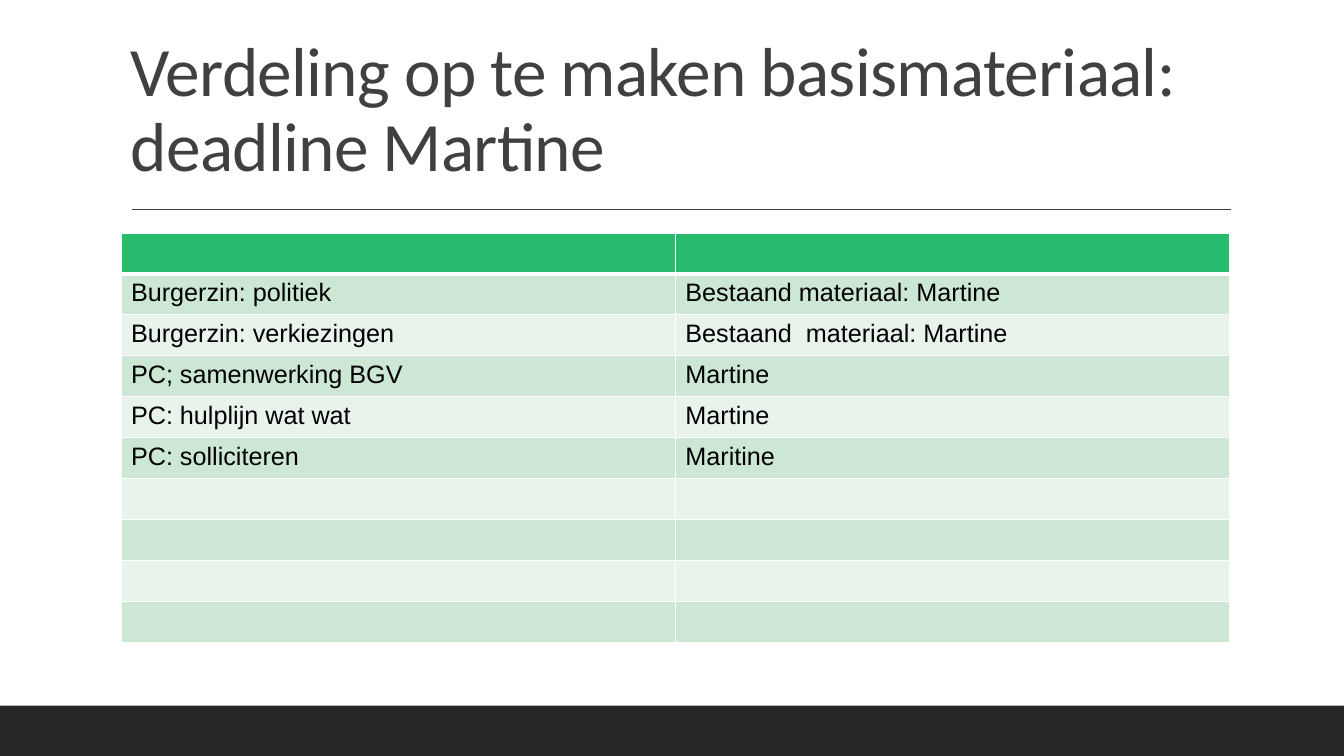
import dataclasses

import pptx
import pptx.dml.color
import pptx.enum.shapes
import pptx.enum.text
import pptx.oxml
import pptx.oxml.ns
import pptx.util

Pt = pptx.util.Pt
qn = pptx.oxml.ns.qn

WHITE, DARK, GREY, BLACK = "FFFFFF", "262626", "404040", "000000"
GREEN, BANDS = "27BB6E", ("CDE7D5", "E8F3EB")
LEFT, WIDTH = 86.4, 792
ROW = 29.23


@dataclasses.dataclass
class Task:
    topic: str = ""
    owner: str = ""


HEAD = Task()
TASKS = [
    Task("Burgerzin: politiek", "Bestaand materiaal: Martine"),
    Task("Burgerzin: verkiezingen", "Bestaand  materiaal: Martine"),
    Task("PC; samenwerking BGV", "Martine"),
    Task("PC: hulplijn wat wat", "Martine"),
    Task("PC: solliciteren", "Maritine"),
] + [Task()] * 4


def color(code: str) -> pptx.dml.color.RGBColor:
    return pptx.dml.color.RGBColor.from_string(code)


def style(para, name: str, size: float, code: str) -> None:
    para.font.name = name
    para.font.size = Pt(size)
    para.font.color.rgb = color(code)


def add_bar(slide) -> None:
    kind = pptx.enum.shapes.MSO_SHAPE.RECTANGLE
    bar = slide.shapes.add_shape(kind, Pt(0), Pt(504), Pt(960), Pt(36))
    bar.shadow.inherit = False
    bar.fill.solid()
    bar.fill.fore_color.rgb = color(DARK)
    bar.line.fill.background()


def add_rule(slide) -> None:
    kind = pptx.enum.shapes.MSO_CONNECTOR.STRAIGHT
    rule = slide.shapes.add_connector(kind, Pt(94.3), Pt(149.5), Pt(879), Pt(149.5))
    rule.line.color.rgb = color(GREY)
    rule.line.width = Pt(1)
    pptx.oxml.ns  # effect list below switches the theme shadow off
    rule._element.spPr.append(pptx.oxml.parse_xml(
        f'<a:effectLst {pptx.oxml.ns.nsdecls("a")}/>'))


def add_title(slide) -> None:
    box = slide.shapes.add_textbox(Pt(LEFT), Pt(22.5), Pt(WIDTH), Pt(114.5))
    frame = box.text_frame
    frame.word_wrap = True
    frame.vertical_anchor = pptx.enum.text.MSO_ANCHOR.BOTTOM
    para = frame.paragraphs[0]
    para.line_spacing = 0.9
    style(para, "Calibri", 49.5, GREY)
    # Letter spacing, in hundredths of a point
    para._p.pPr.find(qn("a:defRPr")).set("spc", "-50")
    para.add_run().text = "Verdeling op te maken basismateriaal:"
    para.add_line_break()
    para.add_run().text = "deadline Martine"


def add_edge(cell, side: str, width: float) -> None:
    edge = pptx.oxml.parse_xml(
        f'<a:ln{side} {pptx.oxml.ns.nsdecls("a")} w="{Pt(width)}">'
        f'<a:solidFill><a:srgbClr val="{WHITE}"/></a:solidFill></a:ln{side}>')
    cell._tc.get_or_add_tcPr().append(edge)


def fill_cell(cell, text: str, code: str, top: float, base: float) -> None:
    for side, width in {"L": 1, "R": 1, "T": top, "B": base}.items():
        add_edge(cell, side, width)
    cell.fill.solid()
    cell.fill.fore_color.rgb = color(code)
    cell.text = text
    style(cell.text_frame.paragraphs[0], "Arial", 18, BLACK)


def add_tasks(slide) -> None:
    rows = [HEAD] + TASKS
    count = len(rows)
    table = slide.shapes.add_table(
        count, 2, Pt(LEFT), Pt(166.4), Pt(WIDTH), Pt(ROW * count)).table
    for col in table.columns:
        col.width = Pt(WIDTH / 2)
    for i, task in enumerate(rows):
        table.rows[i].height = Pt(ROW)
        code = BANDS[(i - 1) % 2] if i else GREEN
        # A thick edge parts the header from the body
        top, base = (3 if i == 1 else 1), (3 if i == 0 else 1)
        for j, text in enumerate((task.topic, task.owner)):
            fill_cell(table.cell(i, j), text, code, top, base)


def main() -> None:
    deck = pptx.Presentation()
    deck.slide_width, deck.slide_height = Pt(960), Pt(540)
    slide = deck.slides.add_slide(deck.slide_layouts[6])
    # Frame of the page
    add_bar(slide)
    add_rule(slide)
    # Content
    add_title(slide)
    add_tasks(slide)
    deck.save("out.pptx")


if __name__ == "__main__":
    main()
